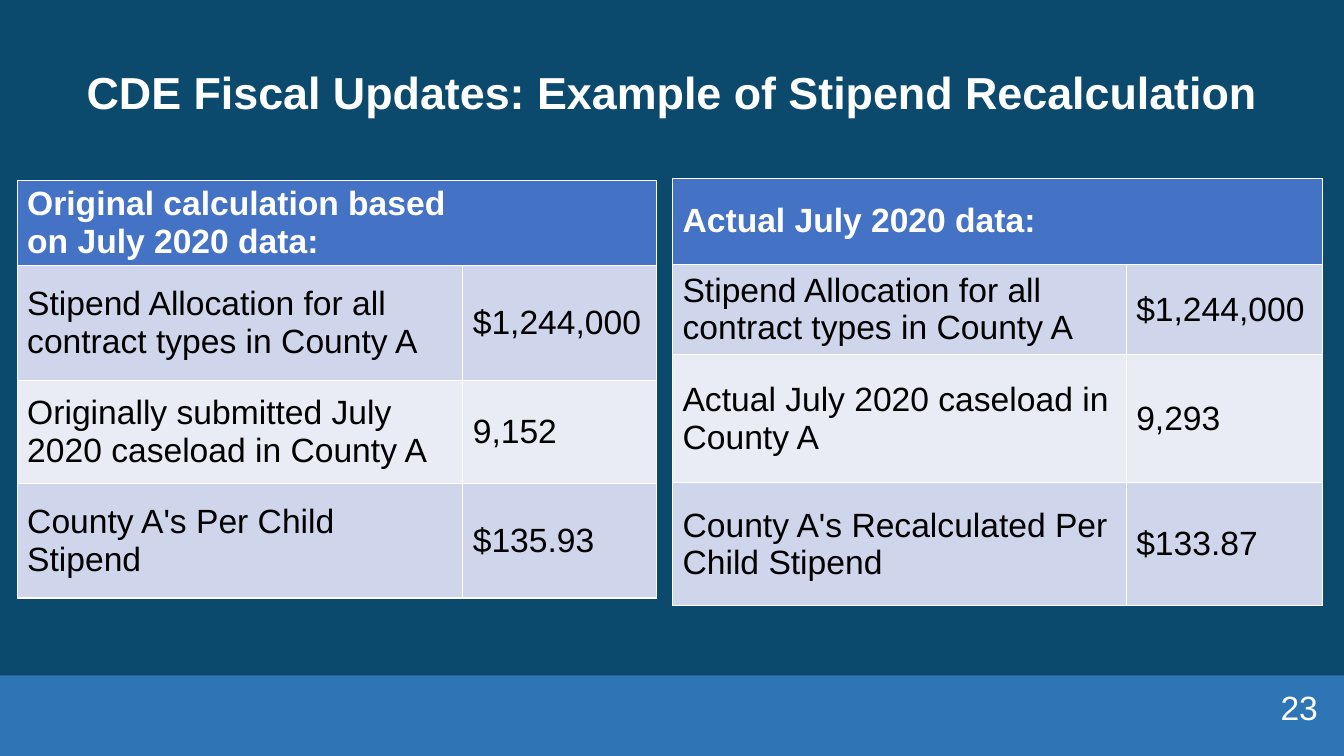
import pptx
import pptx.util
import pptx.dml.color
import pptx.enum.shapes
import pptx.enum.text
import pptx.oxml

Inch = pptx.util.Inches
Pt = pptx.util.Pt
Align = pptx.enum.text.PP_ALIGN
Middle = pptx.enum.text.MSO_ANCHOR.MIDDLE
NS = "http://schemas.openxmlformats.org/drawingml/2006/main"
WIDE, HIGH = 13.33, 7.5
BAND = 0.8

hues = {
    "back": "0C4A6D",
    "band": "2E75B6",
    "head": "4472C4",
    "odd": "CFD5EA",
    "even": "E9EBF5",
    "white": "FFFFFF",
    "black": "000000",
}


def paint(fill, hue):
    fill.solid()
    fill.fore_color.rgb = pptx.dml.color.RGBColor.from_string(hues[hue])


def write(frame, text, size, hue, bold=False, align=Align.LEFT):
    frame.word_wrap = True
    frame.vertical_anchor = Middle
    line = frame.paragraphs[0]
    line.text = text
    line.alignment = align
    line.font.name = "Arial"
    line.font.size = Pt(size)
    line.font.bold = bold
    line.font.color.rgb = pptx.dml.color.RGBColor.from_string(hues[hue])


deck = pptx.Presentation()
deck.slide_width, deck.slide_height = Inch(WIDE), Inch(HIGH)
slide = deck.slides.add_slide(deck.slide_layouts[5])
paint(slide.background.fill, "back")

band = slide.shapes.add_shape(
    pptx.enum.shapes.MSO_SHAPE.RECTANGLE,
    0, Inch(HIGH - BAND), Inch(WIDE), Inch(BAND))
band.shadow.inherit = False
paint(band.fill, "band")
band.line.fill.background()

title = slide.shapes.title
title.left, title.top = Inch(0.17), Inch(0.22)
title.width, title.height = Inch(13), Inch(1.45)
write(title.text_frame, "CDE Fiscal Updates: Example of Stipend Recalculation",
      32, "white", True, Align.CENTER)
title.text_frame.paragraphs[0].line_spacing = 0.9

grids = [
    (0.17, 1.79, [4.42, 1.92], [0.84, 1.14, 1.02, 1.14], [
        ("Original calculation based on July 2020 data:", ""),
        ("Stipend Allocation for all contract types in County A", "$1,244,000"),
        ("Originally submitted July 2020 caseload in County A", "9,152"),
        ("County A's Per Child Stipend", "$135.93"),
    ]),
    (6.67, 1.77, [4.5, 1.95], [0.85, 0.9, 1.27, 1.22], [
        ("Actual July 2020 data:", ""),
        ("Stipend Allocation for all contract types in County A", "$1,244,000"),
        ("Actual July 2020 caseload in County A", "9,293"),
        ("County A's Recalculated Per Child Stipend", "$133.87"),
    ]),
]

for left, top, cols, rows, words in grids:
    table = slide.shapes.add_table(
        len(rows), len(cols), Inch(left), Inch(top),
        Inch(sum(cols)), Inch(sum(rows))).table
    for col, width in zip(table.columns, cols):
        col.width = Inch(width)
    for r, (row, height) in enumerate(zip(table.rows, rows)):
        row.height = Inch(height)
        head = r == 0
        for c, text in enumerate(words[r]):
            cell = table.cell(r, c)
            cell.vertical_anchor = Middle
            paint(cell.fill, "head" if head else "odd" if r % 2 else "even")
            write(cell.text_frame, text, 24, "white" if head else "black", head)
            bare = ("R" if c == 0 else "L") if head else ""
            props = cell._tc.get_or_add_tcPr()
            for spot, side in enumerate("LRTB"):
                ink = "<a:noFill/>" if side == bare else (
                    f'<a:solidFill><a:srgbClr val="{hues["white"]}"/></a:solidFill>')
                props.insert(spot, pptx.oxml.parse_xml(
                    f'<a:ln{side} xmlns:a="{NS}" w="{Pt(1)}">{ink}</a:ln{side}>'))

page = slide.shapes.add_textbox(Inch(10.17), Inch(6.81), Inch(3), Inch(0.4))
write(page.text_frame, "23", 24, "white", align=Align.RIGHT)

deck.save("out.pptx")
